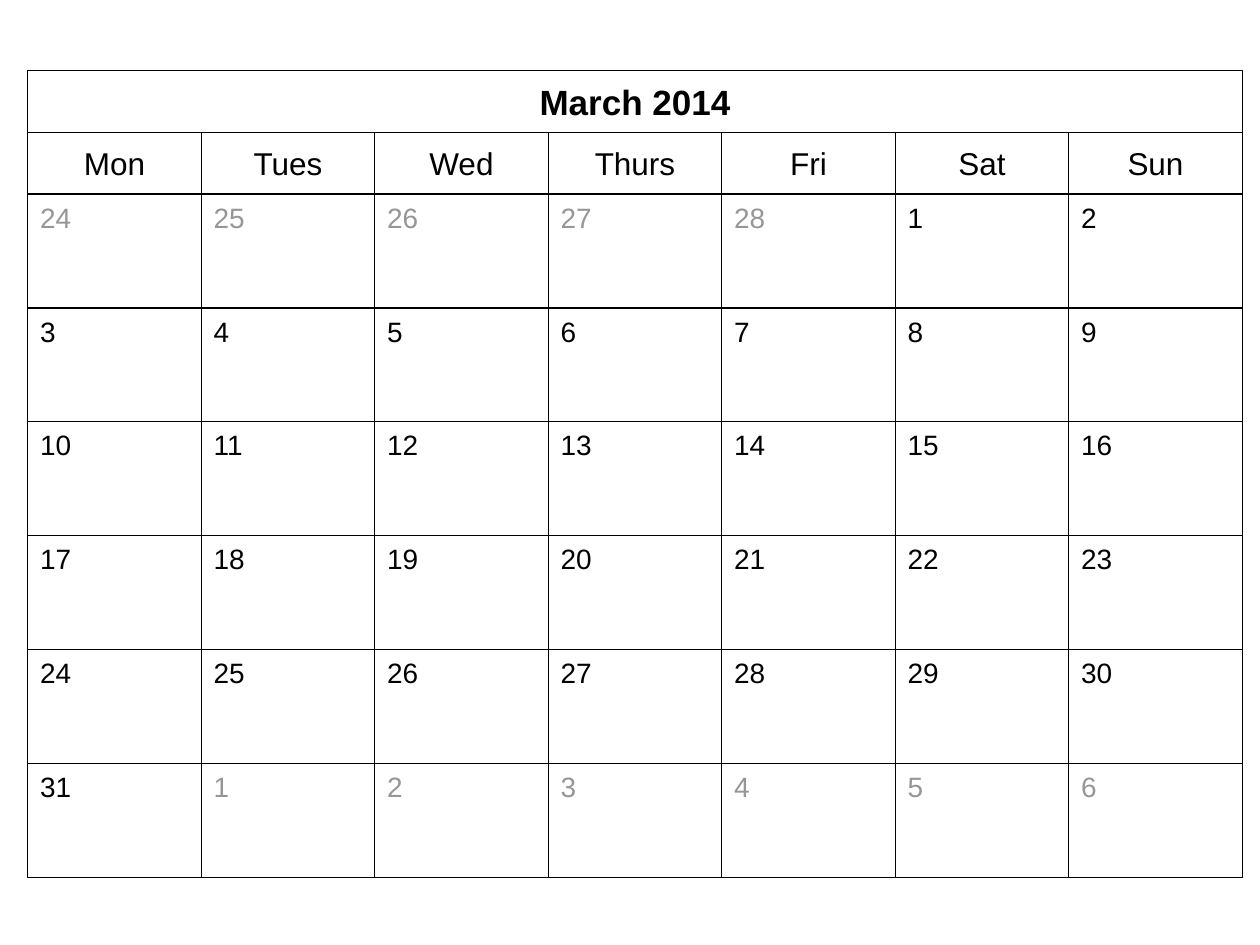
from pptx import Presentation
from pptx.dml.color import RGBColor
from pptx.enum import shapes, text
from pptx.util import Inches, Pt

# Content
TITLE = "March 2014"
DAYS = ["Mon", "Tues", "Wed", "Thurs", "Fri", "Sat", "Sun"]
BEFORE = range(24, 29)
MONTH = range(1, 32)
AFTER = range(1, 7)

# Colours and grid, in inches
BLACK, GREY, WHITE = "000000", "969696", "FFFFFF"
LEFT, TOP, WIDTH = 0.22, 0.56, 9.64
HEAD_H, DAY_H = 0.49, 0.904
COL_W = WIDTH / len(DAYS)
GRID_TOP = TOP + 2 * HEAD_H

# Text formats
HEAD = {"align": text.PP_ALIGN.CENTER, "anchor": text.MSO_ANCHOR.MIDDLE, "pad": 0.02}
DATE = {"align": text.PP_ALIGN.LEFT, "anchor": text.MSO_ANCHOR.TOP, "pad": 0.05}


def color(code):
    return RGBColor.from_string(code)


def style(box, place, words, look, size, ink=BLACK, fill=None, bold=False):
    for name, val in zip(("left", "top", "width", "height"), place):
        setattr(box, name, Inches(val))
    if fill:
        box.fill.solid()
        box.fill.fore_color.rgb = color(fill)
    else:
        box.fill.background()
    box.line.color.rgb = color(BLACK)
    box.line.width = Pt(0.75)

    frame = box.text_frame
    frame.text = words
    pad = Inches(look["pad"])
    form = {"word_wrap": True, "auto_size": text.MSO_AUTO_SIZE.NONE,
            "vertical_anchor": look["anchor"],
            "margin_left": Inches(0.1), "margin_right": Inches(0.1),
            "margin_top": pad, "margin_bottom": pad}
    for name, val in form.items():
        setattr(frame, name, val)
    para = frame.paragraphs[0]
    para.alignment = look["align"]
    font = para.runs[0].font
    for name, val in {"name": "Arial", "size": Pt(size), "bold": bold}.items():
        setattr(font, name, val)
    font.color.rgb = color(ink)


def add_cell(slide, place, *args, **form):
    box = slide.shapes.add_shape(shapes.MSO_SHAPE.RECTANGLE, 0, 0, 0, 0)
    box.shadow.inherit = False
    style(box, place, *args, **form)


def main():
    prs = Presentation()
    prs.slide_width, prs.slide_height = Inches(10), Inches(7.5)
    slide = prs.slides.add_slide(prs.slide_layouts[5])

    # Month title
    style(slide.shapes.title, (LEFT, TOP, WIDTH, HEAD_H), TITLE, HEAD, 20,
          fill=WHITE, bold=True)

    # Weekday row
    for col, day in enumerate(DAYS):
        place = (LEFT + col * COL_W, TOP + HEAD_H, COL_W, HEAD_H)
        add_cell(slide, place, day, HEAD, 18, fill=WHITE)

    # Dates, week by week
    dates = [(num, ink) for span, ink in ((BEFORE, GREY), (MONTH, BLACK), (AFTER, GREY))
             for num in span]
    for pos, (num, ink) in enumerate(dates):
        row, col = divmod(pos, len(DAYS))
        place = (LEFT + col * COL_W, GRID_TOP + row * DAY_H, COL_W, DAY_H)
        add_cell(slide, place, str(num), DATE, 16, ink=ink)

    prs.save("out.pptx")


if __name__ == "__main__":
    main()
